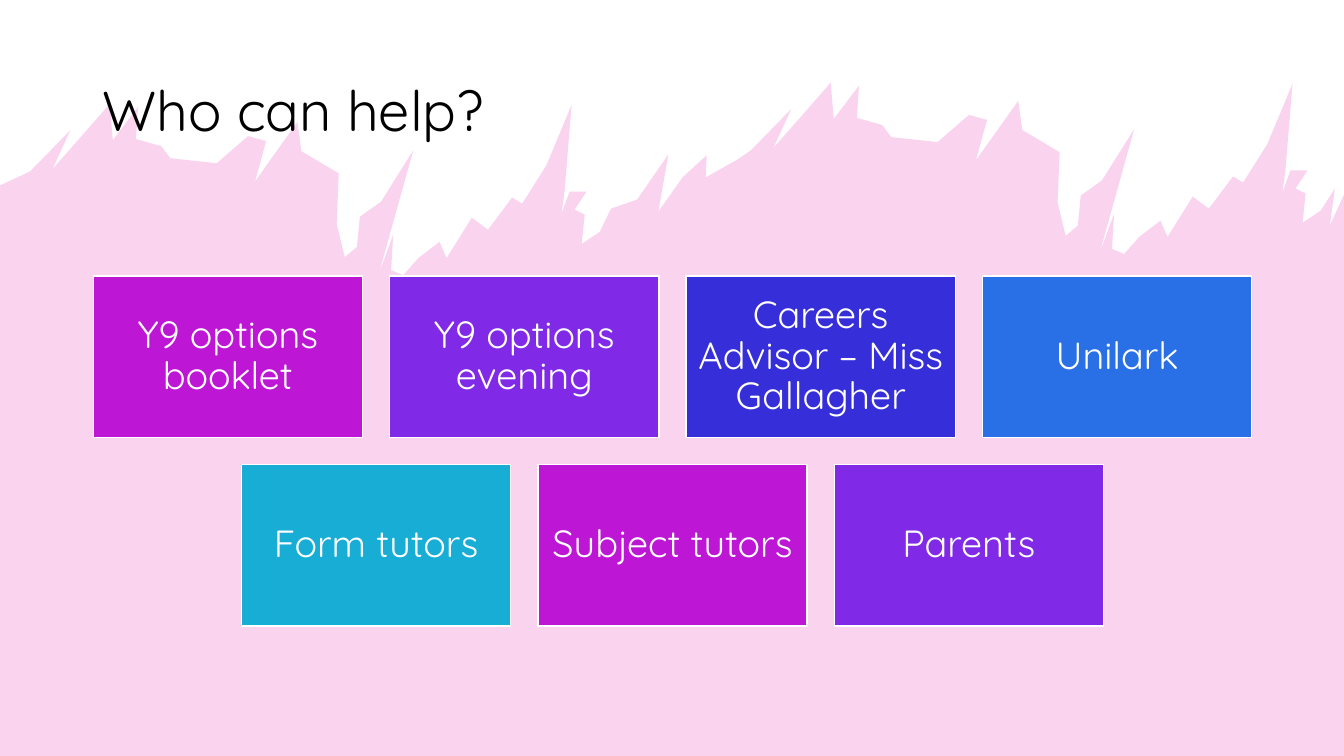
"""Build the "Who can help?" slide: seven cards over a pink paint splash."""
from pptx import Presentation
from pptx.dml.color import RGBColor
from pptx.enum.shapes import MSO_SHAPE
from pptx.enum.text import MSO_ANCHOR, PP_ALIGN
from pptx.oxml.ns import qn
from pptx.util import Inches, Pt
from lxml.etree import SubElement

WIDTH, HEIGHT = 13.33, 7.5
MARGIN, CONTENT_WIDTH = 0.92, 11.5


def paint(fill, color):
    """Give a fill one solid colour."""
    fill.solid()
    fill.fore_color.rgb = RGBColor.from_string(color)


def write(frame, text, size, color, align, inset_x, inset_y):
    """Put one vertically centred paragraph into a text frame."""
    frame.word_wrap = True
    frame.vertical_anchor = MSO_ANCHOR.MIDDLE
    frame.margin_left = frame.margin_right = Inches(inset_x)
    frame.margin_top = frame.margin_bottom = Inches(inset_y)
    paragraph = frame.paragraphs[0]
    paragraph.alignment = align
    paragraph.line_spacing = 0.9
    run = paragraph.add_run()
    run.text = text
    run.font.size = Pt(size)
    run.font.name = "Quicksand"
    paint(run.font.fill, color)


prs = Presentation()
prs.slide_width, prs.slide_height = Inches(WIDTH), Inches(HEIGHT)
slide = prs.slides.add_slide(prs.slide_layouts[6])
paint(slide.background.fill, "FFFFFF")

splash = [
    (0.3, 1.7), (0.7, 1.29), (0.52, 1.68), (1.09, 1.03), (1.12, 1.39),
    (1.37, 1.06), (1.35, 1.38), (1.6, 1.45), (1.69, 1.57), (2.15, 1.62),
    (2.46, 1.35), (2.64, 1.4), (2.53, 1.8), (2.95, 1.21), (2.99, 1.5),
    (3.36, 1.72), (3.34, 2.22), (3.42, 2.55), (3.54, 2.45), (3.57, 2.15),
    (3.78, 2), (4.1, 1.49), (3.76, 2.71), (3.9, 2.33), (3.88, 2.68),
    (4, 2.73), (4.15, 2.56), (4.36, 2.4), (4.43, 2.56), (4.68, 2.16),
    (4.84, 2.28), (5.08, 1.96), (5.18, 2.02), (5.42, 1.64), (5.67, 1.04),
    (5.6, 1.9), (5.57, 2.12), (5.65, 1.9), (5.82, 1.9), (5.7, 2.08),
    (5.8, 2.13), (5.77, 2.42), (5.95, 2.3),
]
bridge = [
    (6.06, 2.07), (6.32, 1.98), (6.63, 1.53), (6.53, 2.1), (6.77, 1.76),
    (7.01, 1.54), (7, 1.76), (7.32, 1.58),
]
REPEAT_X, REPEAT_Y = 7.15, -0.21
second_splash = [(x + REPEAT_X, y + REPEAT_Y) for x, y in splash]
right_edge = [(13.24, 1.87), (13.19, 2.24), (WIDTH, 1.93), (WIDTH, HEIGHT)]
left_edge = [(0, HEIGHT), (0, 1.84)]

outline = [
    (Inches(x), Inches(y))
    for x, y in left_edge + splash + bridge + second_splash + right_edge
]
builder = slide.shapes.build_freeform(*outline[0], scale=1.0)
builder.add_line_segments(outline[1:], close=True)
pink_paint = builder.convert_to_shape()
pink_paint.shadow.inherit = False
pink_paint.line.fill.background()
paint(pink_paint.fill, "E729AF")
pink = next(pink_paint.element.iter(qn("a:srgbClr")))
SubElement(pink, qn("a:alpha")).set("val", "20000")

title = slide.shapes.add_textbox(
    Inches(MARGIN), Inches(0.4), Inches(CONTENT_WIDTH), Inches(1.45))
write(title.text_frame, "Who can help?", 40, "000000", PP_ALIGN.LEFT, 0.1, 0.05)

CARD_WIDTH, CARD_HEIGHT, GAP = 2.67, 1.6, 0.27
CARDS_TOP = 2.74
helper_rows = [
    ["Y9 options booklet", "Y9 options evening", "Careers Advisor – Miss Gallagher", "Unilark"],
    ["Form tutors", "Subject tutors", "Parents"],
]
card_colors = ["BD17D5", "8029E7", "362FD9", "2970E7", "17ADD5"]
card_count = 0
for row, helpers in enumerate(helper_rows):
    row_width = len(helpers) * (CARD_WIDTH + GAP) - GAP
    row_left = MARGIN + (CONTENT_WIDTH - row_width) / 2
    for column, helper in enumerate(helpers):
        card = slide.shapes.add_shape(
            MSO_SHAPE.RECTANGLE,
            Inches(row_left + column * (CARD_WIDTH + GAP)),
            Inches(CARDS_TOP + row * (CARD_HEIGHT + GAP)),
            Inches(CARD_WIDTH), Inches(CARD_HEIGHT))
        card.shadow.inherit = False
        paint(card.fill, card_colors[card_count % len(card_colors)])
        paint(card.line.fill, "FFFFFF")
        card.line.width = Pt(1)
        write(card.text_frame, helper, 27, "FFFFFF", PP_ALIGN.CENTER, 0.11, 0.11)
        card_count += 1

prs.save("out.pptx")
